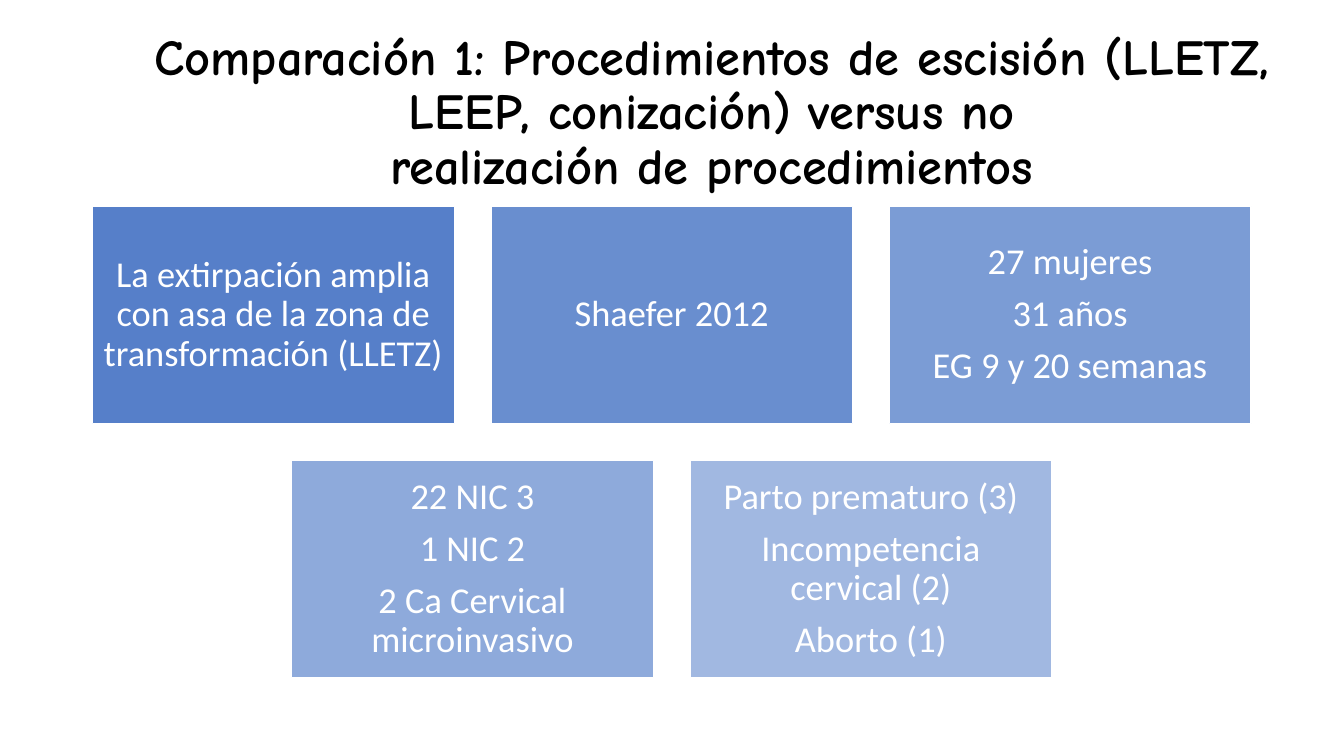
"""Builds the slide comparing excision procedures with no procedure."""
from dataclasses import dataclass

from lxml import etree
from pptx import Presentation
from pptx import util as u
from pptx.dml.color import RGBColor
from pptx.enum import shapes, text
from pptx.oxml.ns import qn


@dataclass(frozen=True)
class Theme:
    title_font: str = "Comic Neue"
    body_font: str = "Calibri"
    title_size: int = 36
    body_size: int = 26
    ink: RGBColor = RGBColor(0, 0, 0)
    paper: RGBColor = RGBColor(255, 255, 255)
    accent: RGBColor = RGBColor(0x44, 0x72, 0xC4)


class SlideBuilder:
    def __init__(self, slide, theme):
        self.slide = slide
        self.theme = theme

    def format_paragraph(self, paragraph, font_name, size, color, bold=False):
        paragraph.alignment = text.PP_ALIGN.CENTER
        paragraph.line_spacing = 0.9
        paragraph.font.name = font_name
        paragraph.font.size = u.Pt(size)
        paragraph.font.bold = bold
        paragraph.font.color.rgb = color

    def title(self, wording, left, top, width, height):
        shape = self.slide.shapes.title
        shape.left, shape.top = u.Cm(left), u.Cm(top)
        shape.width, shape.height = u.Cm(width), u.Cm(height)
        frame = shape.text_frame
        frame.text = wording
        frame.word_wrap = True
        frame.auto_size = text.MSO_AUTO_SIZE.NONE
        frame.vertical_anchor = text.MSO_ANCHOR.MIDDLE
        theme = self.theme
        self.format_paragraph(frame.paragraphs[0], theme.title_font,
                              theme.title_size, theme.ink, bold=True)

    def card(self, lines, left, top, width, height, opacity):
        theme = self.theme
        shape = self.slide.shapes.add_shape(
            shapes.MSO_SHAPE.RECTANGLE, u.Cm(left), u.Cm(top), u.Cm(width), u.Cm(height))
        shape.shadow.inherit = False
        shape.fill.solid()
        shape.fill.fore_color.rgb = theme.accent
        color = shape.fill._xPr.find(qn("a:solidFill"))[0]
        etree.SubElement(color, qn("a:alpha"), val=str(opacity * 1000))
        shape.line.color.rgb = theme.paper
        shape.line.width = u.Pt(1)
        frame = shape.text_frame
        frame.word_wrap = True
        frame.vertical_anchor = text.MSO_ANCHOR.MIDDLE
        frame.margin_left = frame.margin_right = u.Cm(0.28)
        frame.margin_top = frame.margin_bottom = u.Cm(0.28)
        frame.text = "\n".join(lines)
        for paragraph in frame.paragraphs:
            self.format_paragraph(paragraph, theme.body_font, theme.body_size, theme.paper)
            paragraph.space_after = u.Pt(9)
        frame.paragraphs[-1].space_after = u.Pt(0)

    def card_rows(self, rows, center, top, width, height, gap):
        opacity = 90
        for row_index, row in enumerate(rows):
            left = center - (len(row) * (width + gap) - gap) / 2
            for column, lines in enumerate(row):
                self.card(lines, left + column * (width + gap),
                          top + row_index * (height + gap), width, height, opacity)
                opacity -= 10


CARD_ROWS = [
    [
        ["La extirpación amplia con asa de la zona de transformación (LLETZ)"],
        ["Shaefer 2012"],
        ["27 mujeres", "31 años", "EG 9 y 20 semanas"],
    ],
    [
        ["22 NIC 3", "1 NIC 2", "2 Ca Cervical microinvasivo"],
        ["Parto prematuro (3)", "Incompetencia cervical (2)", "Aborto (1)"],
    ],
]


def main():
    presentation = Presentation()
    presentation.slide_width = u.Cm(33.87)
    presentation.slide_height = u.Cm(19.05)
    slide = presentation.slides.add_slide(presentation.slide_layouts.get_by_name("Title Only"))
    builder = SlideBuilder(slide, Theme())
    builder.title("Comparación 1: Procedimientos de escisión (LLETZ, LEEP, conización) "
                  "versus no\vrealización de procedimientos", 2.34, 1.02, 31.19, 3.68)
    builder.card_rows(CARD_ROWS, center=16.93, top=5.2, width=9.12, height=5.48, gap=0.92)
    presentation.save("out.pptx")


if __name__ == "__main__":
    main()
